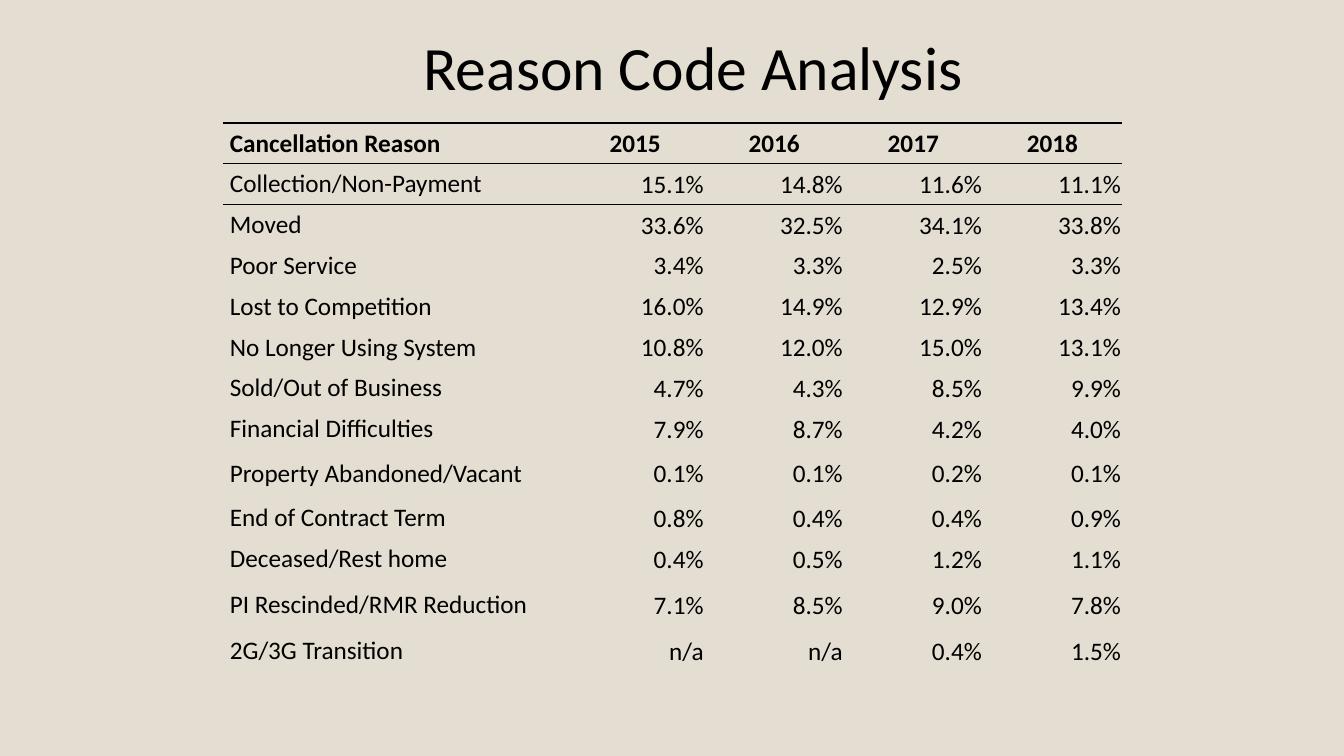
from lxml import etree
from pptx import Presentation, util as u
from pptx.dml import color
from pptx.enum import text
from pptx.oxml import ns

WIDTH, HEIGHT = u.Inches(13.33), u.Inches(7.5)
INK, SAND = "000000", "E3DED1"
FONT = "Calibri"
YEARS = ["2015", "2016", "2017", "2018"]
REASONS = [
    ("Collection/Non-Payment", "15.1%", "14.8%", "11.6%", "11.1%"),
    ("Moved", "33.6%", "32.5%", "34.1%", "33.8%"),
    ("Poor Service", "3.4%", "3.3%", "2.5%", "3.3%"),
    ("Lost to Competition", "16.0%", "14.9%", "12.9%", "13.4%"),
    ("No Longer Using System", "10.8%", "12.0%", "15.0%", "13.1%"),
    ("Sold/Out of Business", "4.7%", "4.3%", "8.5%", "9.9%"),
    ("Financial Difficulties", "7.9%", "8.7%", "4.2%", "4.0%"),
    ("Property Abandoned/Vacant", "0.1%", "0.1%", "0.2%", "0.1%"),
    ("End of Contract Term", "0.8%", "0.4%", "0.4%", "0.9%"),
    ("Deceased/Rest home", "0.4%", "0.5%", "1.2%", "1.1%"),
    ("PI Rescinded/RMR Reduction", "7.1%", "8.5%", "9.0%", "7.8%"),
    ("2G/3G Transition", "n/a", "n/a", "0.4%", "1.5%"),
]
ROW_SHARE = 5.4
TALL_ROW_SHARES = {8: 6.4, 11: 6.8}
LABEL_MARGINS = (0.07, 0.04, 0.07, 0.04)
FIGURE_MARGINS = (0.01, 0.01, 0.01, 0)
NO_STYLE = "{2D5ABB26-0587-4C30-8999-92F81FD0307C}"


def across(share):
    """Return a percentage of the slide width."""
    return round(WIDTH * share / 100)


def down(share):
    """Return a percentage of the slide height."""
    return round(HEIGHT * share / 100)


def rgb(value):
    """Turn a hex string into a colour."""
    return color.RGBColor.from_string(value)


def style_paragraph(paragraph, size, alignment, bold=False):
    """Set the font and alignment of a paragraph."""
    paragraph.alignment = alignment
    paragraph.font.name = FONT
    paragraph.font.size = u.Pt(size)
    paragraph.font.bold = bold
    paragraph.font.color.rgb = rgb(INK)


def add_title(slide, wording):
    """Add the right-aligned slide title."""
    title = slide.shapes.add_textbox(across(26.41), down(2.27), across(45.99), down(14))
    frame = title.text_frame
    frame.word_wrap = True
    frame.vertical_anchor = text.MSO_ANCHOR.MIDDLE
    paragraph = frame.paragraphs[0]
    paragraph.text = wording
    paragraph.line_spacing = 0.9
    style_paragraph(paragraph, 44, text.PP_ALIGN.RIGHT)


def rule_cell(cell, ruled_sides):
    """Draw one-point rules on the given sides and clear the others."""
    properties = cell._tc.get_or_add_tcPr()
    for position, side in enumerate(("lnL", "lnR", "lnT", "lnB")):
        line = etree.Element(ns.qn(f"a:{side}"), w=str(u.Pt(1)))
        if side in ruled_sides:
            fill = etree.SubElement(line, ns.qn("a:solidFill"))
            etree.SubElement(fill, ns.qn("a:srgbClr"), val=INK)
        else:
            etree.SubElement(line, ns.qn("a:noFill"))
        properties.insert(position, line)


def fill_cell(cell, wording, alignment, margins, bold, ruled_sides):
    """Write and format one table cell."""
    cell.text = wording
    cell.vertical_anchor = text.MSO_ANCHOR.MIDDLE
    cell.margin_left, cell.margin_top, cell.margin_right, cell.margin_bottom = map(u.Inches, margins)
    cell.fill.background()
    style_paragraph(cell.text_frame.paragraphs[0], 18, alignment, bold)
    rule_cell(cell, ruled_sides)


def add_reason_table(slide):
    """Add the table of cancellation reasons by year."""
    records = [("Cancellation Reason", *YEARS), *REASONS]
    row_shares = [TALL_ROW_SHARES.get(row, ROW_SHARE) for row in range(len(records))]
    column_shares = [25.5] + [10.35] * len(YEARS)
    frame = slide.shapes.add_table(
        len(records), len(column_shares), across(16.58), down(16.27),
        across(sum(column_shares)), down(sum(row_shares)))
    table = frame.table
    table.first_row = table.horz_banding = False
    table._tbl.tblPr.find(ns.qn("a:tableStyleId")).text = NO_STYLE
    for column, share in zip(table.columns, column_shares):
        column.width = across(share)
    for row, share in zip(table.rows, row_shares):
        row.height = down(share)
    for row, record in enumerate(records):
        header = row == 0
        ruled_sides = ("lnT", "lnB") if row < 2 else ("lnT",) if row == 2 else ()
        for column, wording in enumerate(record):
            if column == 0:
                alignment = text.PP_ALIGN.LEFT
            else:
                alignment = text.PP_ALIGN.CENTER if header else text.PP_ALIGN.RIGHT
            margins = LABEL_MARGINS if header or column == 0 else FIGURE_MARGINS
            fill_cell(table.cell(row, column), wording, alignment, margins, header, ruled_sides)


def main():
    """Build and save the slide."""
    presentation = Presentation()
    presentation.slide_width, presentation.slide_height = WIDTH, HEIGHT
    slide = presentation.slides.add_slide(presentation.slide_layouts[6])
    slide.background.fill.solid()
    slide.background.fill.fore_color.rgb = rgb(SAND)
    add_title(slide, "Reason Code Analysis")
    add_reason_table(slide)
    presentation.save("out.pptx")


if __name__ == "__main__":
    main()
